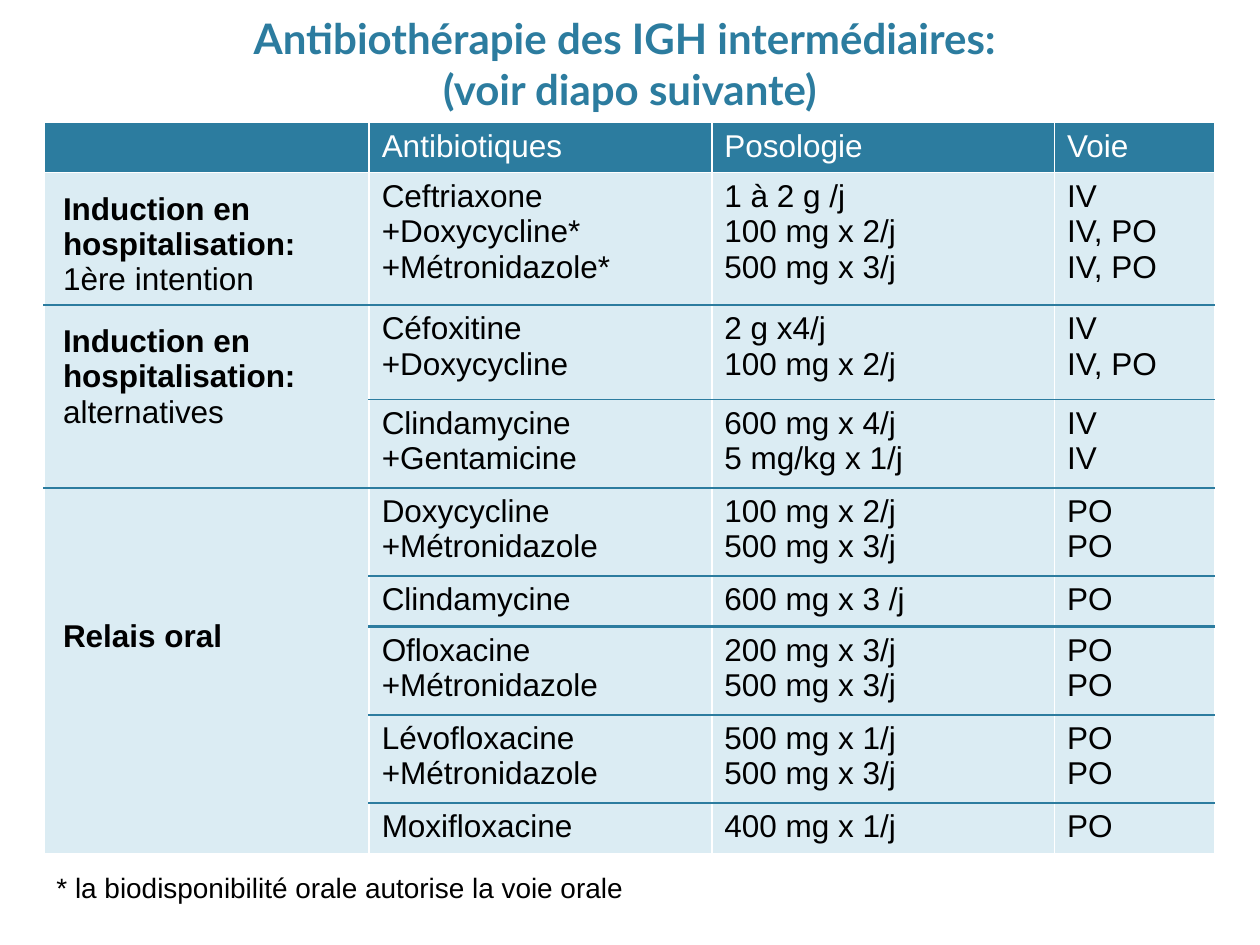
from pptx import Presentation
from pptx.dml.color import RGBColor
from pptx.enum.text import MSO_ANCHOR, PP_ALIGN
from pptx.oxml.ns import qn
from pptx.util import Inches, Pt
from lxml.etree import SubElement

HEX = {"teal": "2C7C9F", "pale": "DBECF3", "white": "FFFFFF", "black": "000000"}
COLS = [2.58, 2.72, 2.72, 1.27]
HEAD = ["", "Antibiotiques", "Posologie", "Voie"]

# Height, line below (colour, points), then drugs, doses and routes
ROWS = [
    (1.05, ("teal", 1.5), "Ceftriaxone\n+Doxycycline*\n+Métronidazole*",
     "1 à 2 g /j\n100 mg x 2/j\n500 mg x 3/j", "IV\nIV, PO\nIV, PO"),
    (0.75, ("teal", 1), "Céfoxitine\n+Doxycycline",
     "2 g x4/j\n100 mg x 2/j", "IV\nIV, PO"),
    (0.69, ("teal", 1.5), "Clindamycine\n+Gentamicine",
     "600 mg x 4/j\n5 mg/kg x 1/j", "IV\nIV"),
    (0.66, ("teal", 1.5), "Doxycycline\n+Métronidazole",
     "100 mg x 2/j\n500 mg x 3/j", "PO\nPO"),
    (0.38, ("teal", 1.5), "Clindamycine", "600 mg x 3 /j", "PO"),
    (0.66, ("teal", 1.5), "Ofloxacine\n+Métronidazole",
     "200 mg x 3/j\n500 mg x 3/j", "PO\nPO"),
    (0.66, ("teal", 1), "Lévofloxacine\n+Métronidazole",
     "500 mg x 1/j\n500 mg x 3/j", "PO\nPO"),
    (0.38, ("white", 1), "Moxifloxacine", "400 mg x 1/j", "PO"),
]

# First row, last row, text (first paragraph bold), top inset, bottom inset
STAGES = [
    (1, 1, "Induction en hospitalisation:\n1ère intention", 0.15, 0),
    (2, 3, "Induction en hospitalisation:\nalternatives", 0.15, 0.15),
    (4, 8, "Relais oral", 1.04, 0.15),
]


def color(name):
    return RGBColor.from_string(HEX[name])


def style(para, size, ink, face="Arial", bold=False):
    for run in para.runs:
        font = run.font
        font.name, font.size, font.bold = face, Pt(size), bold
        font.color.rgb = color(ink)


def add_text(slide, box, text, wrap=True):
    frame = slide.shapes.add_textbox(*map(Inches, box)).text_frame
    frame.word_wrap = wrap
    frame.text = text
    return frame


def add_title(slide, box):
    frame = add_text(slide, box,
                     "Antibiothérapie des IGH intermédiaires: \v(voir diapo suivante)")
    frame.vertical_anchor = MSO_ANCHOR.BOTTOM
    para = frame.paragraphs[0]
    para.alignment = PP_ALIGN.CENTER
    style(para, 24, "teal", "Lato", True)


def edge(cell, top, base):
    """Draw white sides and the given top and bottom lines, ahead of the fill."""
    props = cell._tc.get_or_add_tcPr()
    side = ("white", 1)
    lines = {"a:lnL": side, "a:lnR": side, "a:lnT": top, "a:lnB": base}
    for spot, (tag, (name, width)) in enumerate(lines.items()):
        line = SubElement(props, qn(tag), w=str(Pt(width)))
        fill = SubElement(line, qn("a:solidFill"))
        SubElement(fill, qn("a:srgbClr"), val=HEX[name])
        props.insert(spot, line)


def fill_cell(cell, text, back, ink, top, base):
    cell.fill.solid()
    cell.fill.fore_color.rgb = color(back)
    edge(cell, top, base)
    cell.text = text
    for para in cell.text_frame.paragraphs:
        style(para, 18, ink)


def add_stage(table, stage, rules):
    first, last, text, above, below = stage
    cell = table.cell(first, 0)
    if last > first:
        cell.merge(table.cell(last, 0))
    for row in range(first, last + 1):
        fill_cell(table.cell(row, 0), text if row == first else "",
                  "pale", "black", rules[first], rules[last + 1])
    cell.margin_left = cell.margin_right = Inches(0.15)
    cell.margin_top, cell.margin_bottom = Inches(above), Inches(below)
    style(cell.text_frame.paragraphs[0], 18, "black", bold=True)


def add_grid(slide, left, top):
    heights = [0.4] + [row[0] for row in ROWS]
    rules = [("white", 1)] * 2 + [row[1] for row in ROWS]
    table = slide.shapes.add_table(
        len(heights), len(COLS), Inches(left), Inches(top),
        Inches(sum(COLS)), Inches(sum(heights))).table
    for col, width in zip(table.columns, COLS):
        col.width = Inches(width)
    for row, height in zip(table.rows, heights):
        row.height = Inches(height)
    for col, text in enumerate(HEAD):
        fill_cell(table.cell(0, col), text, "teal", "white", *rules[:2])
    for row, (_, _, *texts) in enumerate(ROWS, 1):
        for col, text in enumerate(texts, 1):
            fill_cell(table.cell(row, col), text, "pale", "black",
                      *rules[row:row + 2])
    for stage in STAGES:
        add_stage(table, stage, rules)


def add_note(slide, box):
    frame = add_text(slide, box,
                     "* la biodisponibilité orale autorise la voie orale", False)
    style(frame.paragraphs[0], 16, "black")


def main():
    deck = Presentation()
    deck.slide_width, deck.slide_height = Inches(10), Inches(7.5)
    slide = deck.slides.add_slide(deck.slide_layouts[6])
    add_title(slide, (0, 0.26, 10, 0.69))
    add_grid(slide, 0.35, 0.97)
    add_note(slide, (0.35, 6.86, 4.84, 0.37))
    deck.save("out.pptx")


if __name__ == "__main__":
    main()
